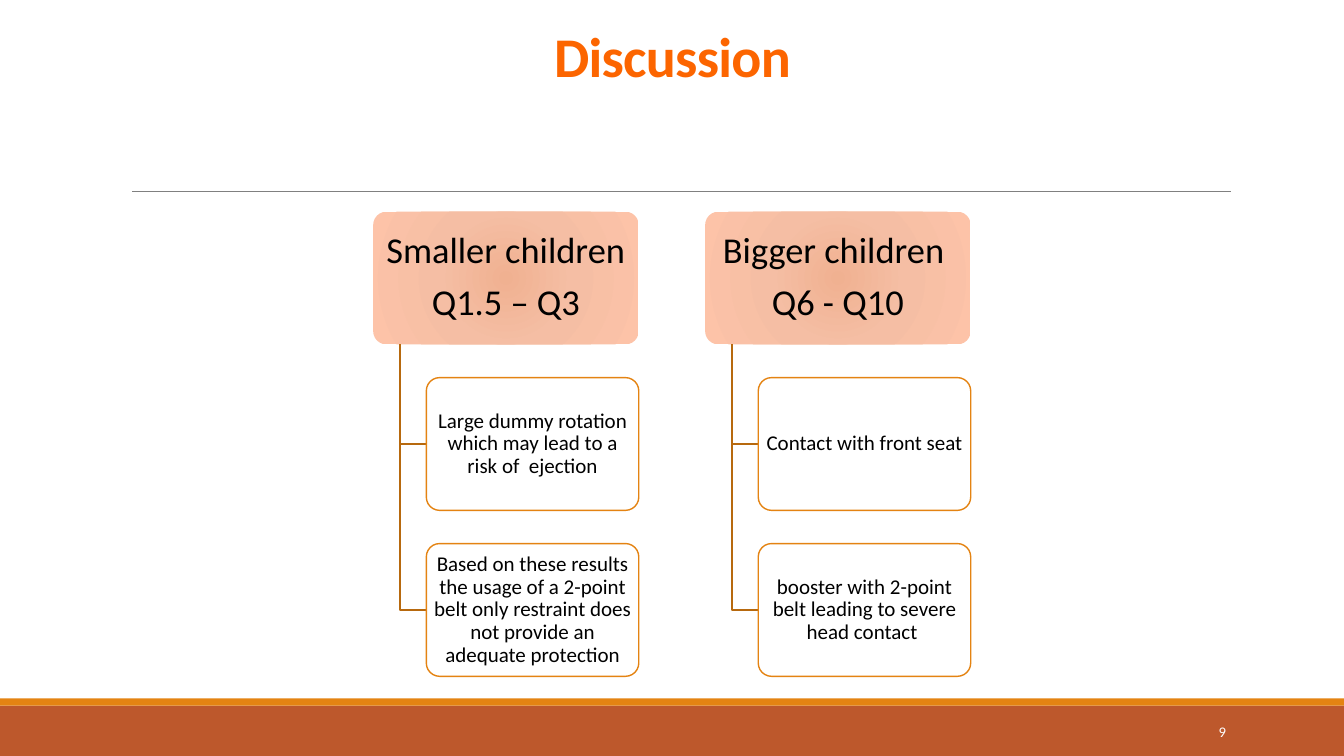
from dataclasses import dataclass

from lxml import etree
from pptx import Presentation
from pptx.dml.color import RGBColor
from pptx.enum.shapes import MSO_CONNECTOR, MSO_SHAPE
from pptx.enum.text import MSO_ANCHOR, MSO_AUTO_SIZE, PP_ALIGN
from pptx.oxml import parse_xml
from pptx.oxml.ns import nsdecls, qn
from pptx.util import Inches, Pt

RECTANGLE = MSO_SHAPE.RECTANGLE
ROUNDED = MSO_SHAPE.ROUNDED_RECTANGLE
STRAIGHT = MSO_CONNECTOR.STRAIGHT
CENTER = PP_ALIGN.CENTER
RIGHT = PP_ALIGN.RIGHT
MIDDLE = MSO_ANCHOR.MIDDLE
NO_AUTOFIT = MSO_AUTO_SIZE.NONE

FONT = "Calibri"
SLIDE_WIDTH, SLIDE_HEIGHT = 13.33, 7.5

# Diagram grid: one unit is the height of a box
UNIT = 1.317
ROW_PITCH = 1.25 * UNIT
HEADER_WIDTH = 2 * UNIT
COLUMN_PITCH = 2.5 * UNIT
TRUNK_OFFSET = 0.2 * UNIT
CHILD_OFFSET = 0.4 * UNIT
DIAGRAM_TOP = 2.1

HEADER_STOPS = ((0, "F0B191"), (45, "F5BEA4"), (100, "FDC3A8"))


@dataclass
class Branch:
    heading: list[str]
    findings: list[str]


@dataclass
class Band:
    top: float
    height: float
    color: str


BRANCHES = [
    Branch(["Smaller children", "Q1.5 – Q3"],
           ["Large dummy rotation which may lead to a risk of  ejection",
            "Based on these results the usage of a 2-point belt only restraint "
            "does not provide an adequate protection"]),
    Branch(["Bigger children ", "Q6 - Q10"],
           ["Contact with front seat",
            "booster with 2-point belt leading to severe head contact "]),
]
BANDS = [Band(7, 0.5, "BD582C"), Band(6.93, 0.07, "E48312")]


def rgb(color: str) -> RGBColor:
    return RGBColor.from_string(color)


def write(shape, lines: list[str], *, size: float, color: str = "000000",
          align=CENTER, bold: bool = False, line_spacing: float = 1.0,
          space_after: float = 0, margins: tuple = (0.1, 0.05),
          tracking: float = 0) -> None:
    frame = shape.text_frame
    frame.word_wrap = True
    frame.auto_size = NO_AUTOFIT
    frame.vertical_anchor = MIDDLE
    frame.margin_left = frame.margin_right = Inches(margins[0])
    frame.margin_top = frame.margin_bottom = Inches(margins[1])
    for index, line in enumerate(lines):
        paragraph = frame.add_paragraph() if index else frame.paragraphs[0]
        paragraph.alignment = align
        paragraph.line_spacing = line_spacing
        paragraph.space_before = Pt(0)
        paragraph.space_after = Pt(space_after)
        run = paragraph.add_run()
        run.text = line
        run.font.name = FONT
        run.font.size = Pt(size)
        run.font.bold = bold
        run.font.color.rgb = rgb(color)
        if tracking:
            run.font._element.set("spc", str(round(tracking * 100)))


def add_box(slide, kind, left: float, top: float, width: float, height: float,
            fill: str, line: str = ""):
    shape = slide.shapes.add_shape(kind, Inches(left), Inches(top),
                                   Inches(width), Inches(height))
    shape.shadow.inherit = False
    shape.fill.solid()
    shape.fill.fore_color.rgb = rgb(fill)
    if line:
        shape.line.color.rgb = rgb(line)
        shape.line.width = Pt(1)
    else:
        shape.line.fill.background()
    if kind == ROUNDED:
        shape.adjustments[0] = 0.1
    return shape


def set_radial_fill(shape, stops: tuple) -> None:
    stop_xml = "".join(
        f'<a:gs pos="{position * 1000}"><a:srgbClr val="{color}"/></a:gs>'
        for position, color in stops)
    gradient = parse_xml(
        f'<a:gradFill {nsdecls("a")} rotWithShape="1"><a:gsLst>{stop_xml}</a:gsLst>'
        '<a:path path="circle"><a:fillToRect l="50000" t="50000" r="50000" b="50000"/>'
        '</a:path></a:gradFill>')
    properties = shape._element.spPr
    properties.replace(properties.find(qn("a:solidFill")), gradient)


def set_opacity(shape, percent: int) -> None:
    color = shape._element.spPr.find(qn("a:solidFill"))[0]
    etree.SubElement(color, qn("a:alpha")).set("val", str(percent * 1000))


def add_elbow(slide, left: float, top: float, right: float, bottom: float) -> None:
    builder = slide.shapes.build_freeform(Inches(left), Inches(top))
    builder.add_line_segments([(Inches(left), Inches(bottom)),
                               (Inches(right), Inches(bottom))], close=False)
    elbow = builder.convert_to_shape()
    elbow.shadow.inherit = False
    elbow.fill.background()
    elbow.line.color.rgb = rgb("B7690E")
    elbow.line.width = Pt(1.25)


def add_branch(slide, branch: Branch, left: float) -> None:
    header = add_box(slide, ROUNDED, left, DIAGRAM_TOP, HEADER_WIDTH, UNIT, "F5BEA4")
    set_radial_fill(header, HEADER_STOPS)
    write(header, branch.heading, size=26, line_spacing=0.9, space_after=9,
          margins=(0.05, 0.04))
    child_left = left + CHILD_OFFSET
    for row, finding in enumerate(branch.findings, start=1):
        top = DIAGRAM_TOP + row * ROW_PITCH
        add_elbow(slide, left + TRUNK_OFFSET, DIAGRAM_TOP + UNIT,
                  child_left, top + UNIT / 2)
        child = add_box(slide, ROUNDED, child_left, top,
                        HEADER_WIDTH - CHILD_OFFSET, UNIT, "FFFFFF", "E48312")
        set_opacity(child, 90)
        write(child, [finding], size=15, line_spacing=0.9, space_after=5,
              margins=(0.03, 0.02))


def add_frame(slide) -> None:
    # Footer bands
    for band in BANDS:
        add_box(slide, RECTANGLE, 0, band.top, SLIDE_WIDTH, band.height, band.color)
    # Rule under the title
    rule = slide.shapes.add_connector(STRAIGHT, Inches(1.31), Inches(1.9),
                                      Inches(12.21), Inches(1.9))
    rule.line.color.rgb = rgb("808080")
    rule.line.width = Pt(0.5)
    etree.SubElement(rule._element.spPr, qn("a:effectLst"))
    # Slide number
    number = slide.shapes.add_textbox(Inches(10.83), Inches(7.06),
                                      Inches(1.43), Inches(0.4))
    write(number, ["9"], size=10.5, color="FFFFFF", align=RIGHT)


def main() -> None:
    presentation = Presentation()
    presentation.slide_width = Inches(SLIDE_WIDTH)
    presentation.slide_height = Inches(SLIDE_HEIGHT)
    slide = presentation.slides.add_slide(presentation.slide_layouts[5])
    add_frame(slide)

    # Title
    title = slide.shapes.title
    title.left, title.top = Inches(1.67), Inches(0.05)
    title.width, title.height = Inches(10), Inches(1.1)
    write(title, ["Discussion"], size=40, color="FC6500", bold=True,
          line_spacing=0.85, tracking=-0.5)

    # Two branches, centred on the slide
    diagram_width = COLUMN_PITCH * (len(BRANCHES) - 1) + HEADER_WIDTH
    diagram_left = (SLIDE_WIDTH - diagram_width) / 2
    for column, branch in enumerate(BRANCHES):
        add_branch(slide, branch, diagram_left + column * COLUMN_PITCH)

    presentation.save("out.pptx")


if __name__ == "__main__":
    main()
